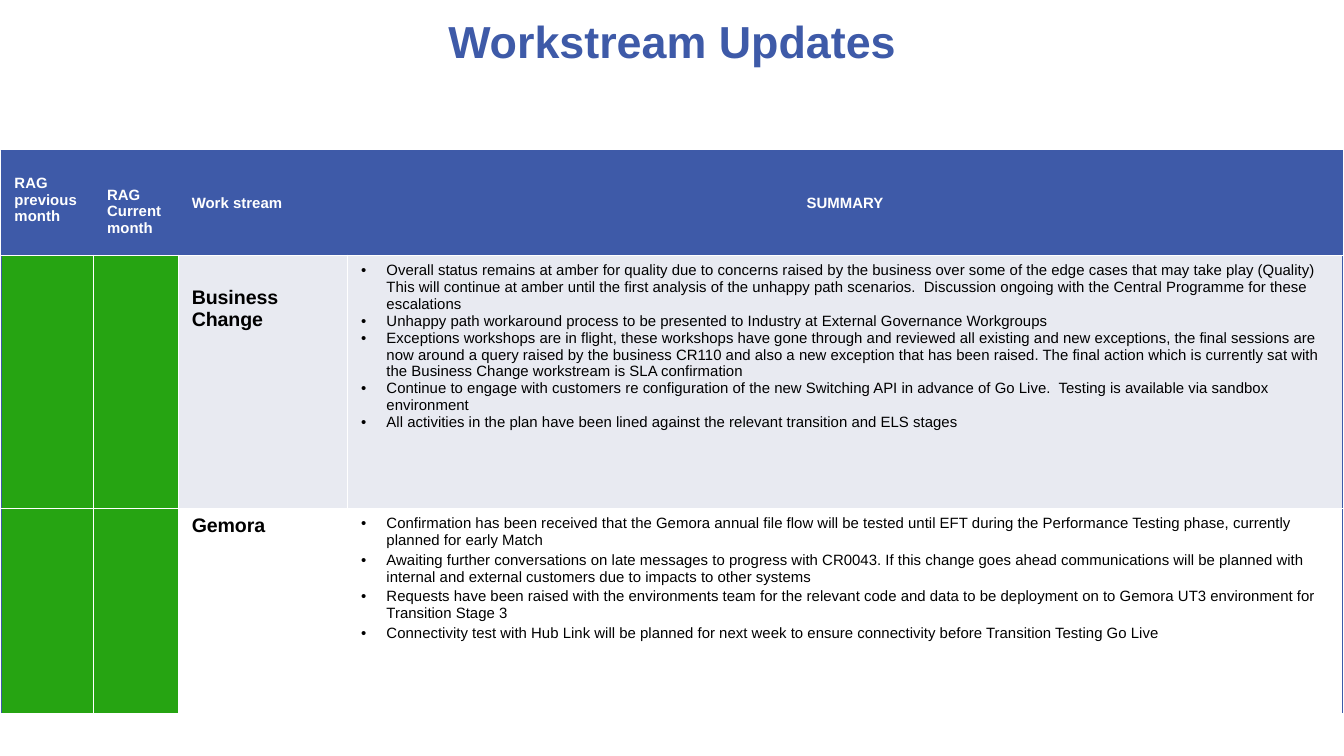
from lxml.etree import SubElement as Sub
from pptx import Presentation
from pptx.dml.color import RGBColor as RGB
from pptx.enum.text import MSO_ANCHOR as Anchor, PP_ALIGN as Align
from pptx.oxml.ns import qn
from pptx.util import Cm, Pt

# Theme
THEME = {
    "font": "Arial",
    "blue": "3E5AA8", "white": "FFFFFF", "black": "000000",
    "green": "26A412", "band": "E8EAF1",
    "title": 24, "name": 10.5, "body": 8,
}

# Content
TITLE = "Workstream Updates"
HEADS = [  # lines, anchor, align, top margin
    (["RAG previous month"], Anchor.TOP, Align.LEFT, 0.45),
    (["RAG", "Current month"], Anchor.MIDDLE, Align.LEFT, 0.45),
    (["Work stream"], Anchor.MIDDLE, Align.LEFT, 0.13),
    (["SUMMARY"], Anchor.MIDDLE, Align.CENTER, 0.13),
]
STREAMS = [
    {"name": "Business Change", "fill": "band", "top": 0.6, "gap": 0,
     "notes": [
         "Overall status remains at amber for quality due to concerns raised by the business over some of the edge cases that may take play (Quality) This will continue at amber until the first analysis of the unhappy path scenarios.  Discussion ongoing with the Central Programme for these escalations",
         "Unhappy path workaround process to be presented to Industry at External Governance Workgroups",
         "Exceptions workshops are in flight, these workshops have gone through and reviewed all existing and new exceptions, the final sessions are now around a query raised by the business CR110 and also a new exception that has been raised. The final action which is currently sat with the Business Change workstream is SLA confirmation",
         "Continue to engage with customers re configuration of the new Switching API in advance of Go Live.  Testing is available via sandbox environment",
         "All activities in the plan have been lined against the relevant transition and ELS stages",
     ]},
    {"name": "Gemora", "fill": "white", "top": 0.13, "gap": 1.6,
     "notes": [
         "Confirmation has been received that the Gemora annual file flow will be tested until EFT during the Performance Testing phase, currently planned for early Match",
         "Awaiting further conversations on late messages to progress with CR0043. If this change goes ahead communications will be planned with internal and external customers due to impacts to other systems",
         "Requests have been raised with the environments team for the relevant code and data to be deployment on to Gemora UT3 environment for Transition Stage 3",
         "Connectivity test with Hub Link will be planned for next week to ensure connectivity before Transition Testing Go Live",
     ]},
]
COLS = [1.75, 1.6, 3.2, 18.8]
ROWS = [1.98, 4.78, 3.89]


def write(frame, lines, size, color, bold=True, align=Align.LEFT,
          gap=0, bullet=False):
    for i, line in enumerate(lines):
        para = frame.add_paragraph() if i else frame.paragraphs[0]
        if bullet:
            props = para._p.get_or_add_pPr()
            props.set("marL", str(Cm(0.48)))
            props.set("indent", str(-Cm(0.48)))
            Sub(props, qn("a:buFont"), typeface=THEME["font"])
            Sub(props, qn("a:buChar"), char="•")
        para.alignment = align
        para.space_before = Pt(gap if i else 0)
        run = para.add_run()
        run.text = line
        font = run.font
        font.name, font.size, font.bold = THEME["font"], Pt(THEME[size]), bold
        font.color.rgb = RGB.from_string(THEME[color])


def border(cell, row, col):
    props = cell._tc.get_or_add_tcPr()
    blue = {"L": row == 0 or col == 0,
            "R": row == 0 or col == len(COLS) - 1,
            "T": row == 0, "B": False}
    for side, edge in blue.items():
        line = Sub(props, qn(f"a:ln{side}"), w=str(Pt(0.5 if edge else 1)))
        fill = Sub(line, qn("a:solidFill"))
        Sub(fill, qn("a:srgbClr"), val=THEME["blue" if edge else "white"])


def style(cell, row, col, fill):
    border(cell, row, col)
    cell.fill.solid()
    cell.fill.fore_color.rgb = RGB.from_string(THEME[fill])


deck = Presentation()
deck.slide_width, deck.slide_height = Cm(25.4), Cm(14.29)
slide = deck.slides.add_slide(deck.slide_layouts[6])

# Status table
table = slide.shapes.add_table(
    len(ROWS), len(COLS), Cm(0.02), Cm(2.85),
    Cm(sum(COLS)), Cm(sum(ROWS))).table
for col, width in zip(table.columns, COLS):
    col.width = Cm(width)
for row, height in zip(table.rows, ROWS):
    row.height = Cm(height)

# Header row
for c, (lines, anchor, align, top) in enumerate(HEADS):
    cell = table.cell(0, c)
    style(cell, 0, c, "blue")
    cell.vertical_anchor = anchor
    cell.margin_top = Cm(top)
    write(cell.text_frame, lines, "body", "white", align=align)

# One row per workstream
for r, item in enumerate(STREAMS, 1):
    for c, fill in enumerate(["green", "green", item["fill"], item["fill"]]):
        style(table.cell(r, c), r, c, fill)
    name, notes = table.cell(r, 2), table.cell(r, 3)
    name.margin_top = Cm(item["top"])
    write(name.text_frame, [item["name"]], "name", "black")
    write(notes.text_frame, item["notes"], "body", "black", bold=False,
          gap=item["gap"], bullet=True)

# Title
frame = slide.shapes.add_textbox(Cm(1.27), 0, Cm(22.86), Cm(1.55)).text_frame
frame.word_wrap = True
frame.vertical_anchor = Anchor.MIDDLE
write(frame, [TITLE], "title", "blue", align=Align.CENTER)

deck.save("out.pptx")
